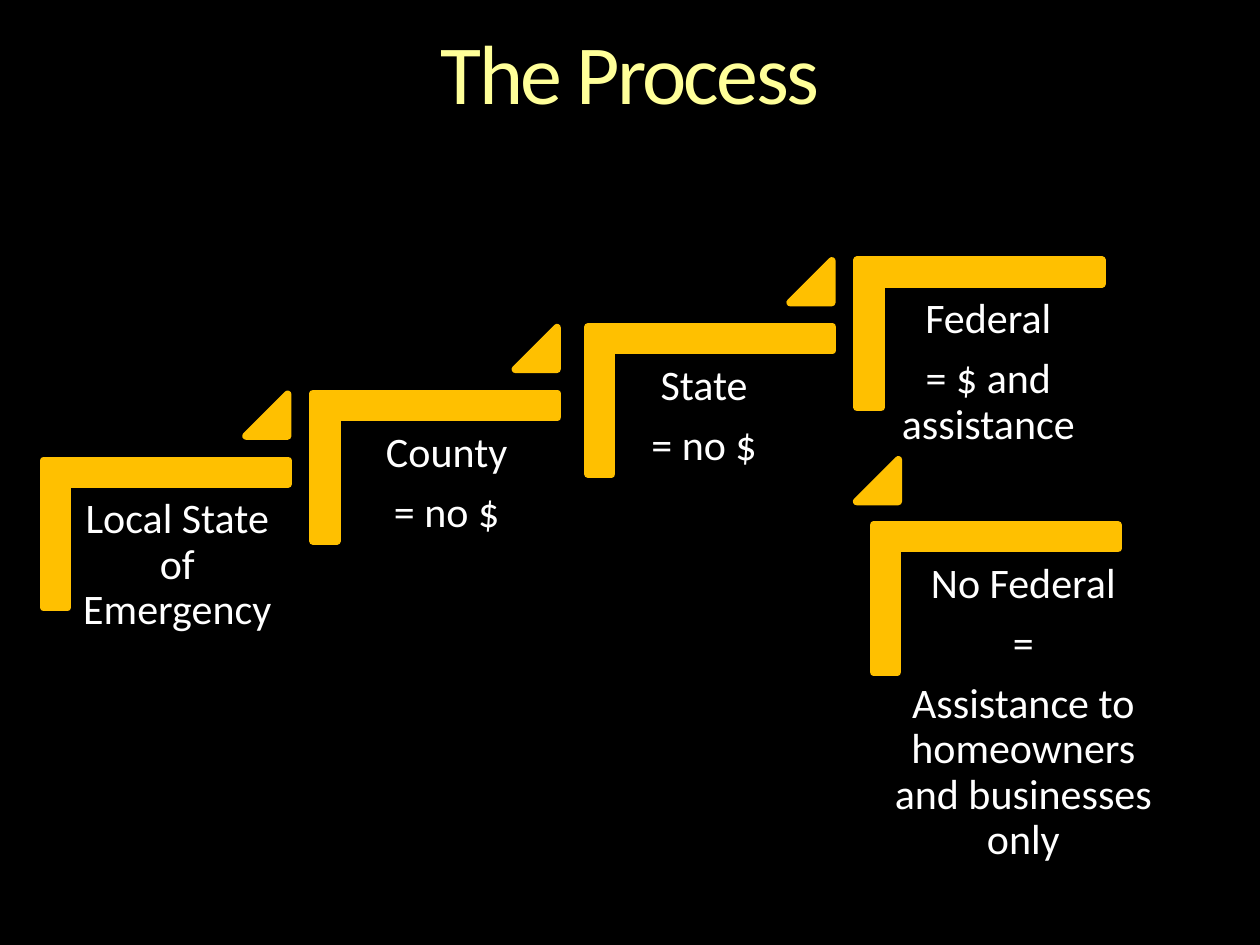
from lxml.etree import SubElement
from pptx import Presentation
from pptx.dml.color import RGBColor
from pptx.enum.shapes import MSO_SHAPE as SHAPE
from pptx.enum.text import MSO_ANCHOR as ANCHOR, PP_ALIGN as ALIGN
from pptx.oxml.ns import qn
from pptx.util import Cm, Pt

COLORS = {"background": "000000", "title": "FFFF99", "step": "FFC000", "text": "FFFFFF"}
FONT = "Calibri"
BAR_W, BAR_H, TRIANGLE = 4.93, 2.97, 0.84
STEP_RISE = 1.345
FIRST_TOP = 9.28

# Left edge, text offset, text width, paragraphs
STEPS = [
    (0.88, 0.47, 4.45, ["Local State of Emergency"]),
    (6.31, 0.47, 4.45, ["County", "= no $"]),
    (11.85, -0.45, 5.59, ["State", "= no $"]),
    (17.28, 0.42, 4.45, ["Federal", "= $ and assistance"]),
]
NO_FEDERAL = (17.61, -0.04, 6.12,
              ["No Federal", "=", "Assistance to homeowners and businesses only"])
NO_FEDERAL_TOP = 10.58


def rgb(name):
    return RGBColor.from_string(COLORS[name])


def format_paragraph(p, size, color):
    p.alignment = ALIGN.CENTER
    p.line_spacing = 0.9
    for r in p.runs:
        r.font.name = FONT
        r.font.size = Pt(size)
        r.font.color.rgb = rgb(color)


def set_margins(tf, margin):
    tf.margin_left = tf.margin_right = tf.margin_top = tf.margin_bottom = Cm(margin)


def add_title(slide, text):
    title = slide.shapes.title
    title.left, title.top, title.width, title.height = Cm(1.06), Cm(0.64), Cm(23.28), Cm(1.85)
    tf = title.text_frame
    tf.text = text
    tf.vertical_anchor = ANCHOR.MIDDLE
    set_margins(tf, 0)
    p = tf.paragraphs[0]
    format_paragraph(p, 48, "title")
    p.runs[0].font._element.set("spc", "-150")


def add_solid(shapes, kind, left, top, width, height, adjustments):
    sp = shapes.add_shape(kind, Cm(left), Cm(top), Cm(width), Cm(height))
    for i, value in enumerate(adjustments):
        sp.adjustments[i] = value
    sp.shadow.inherit = False
    sp.fill.solid()
    sp.fill.fore_color.rgb = rgb("step")
    sp.line.color.rgb = rgb("step")
    sp.line.width = Pt(4.33)
    SubElement(sp.line._ln, qn("a:round"))
    return sp


def add_triangle(shapes, left, top):
    add_solid(shapes, SHAPE.ISOSCELES_TRIANGLE, left, top, TRIANGLE, TRIANGLE, [1])


def add_step(shapes, step, top):
    left, offset, width, lines = step
    # The corner is turned a quarter, so its box is upright around the same centre
    turn = (BAR_W - BAR_H) / 2
    corner = add_solid(shapes, SHAPE.CORNER, left + turn, top - turn,
                       BAR_H, BAR_W, [0.161, 0.161])
    corner.rotation = 90

    box = shapes.add_textbox(Cm(left + offset), Cm(top + 0.5), Cm(width), Cm(3.91))
    tf = box.text_frame
    tf.word_wrap = True
    set_margins(tf, 0.25)
    tf.text = "\n".join(lines)
    for p in tf.paragraphs:
        format_paragraph(p, 24, "text")
        p.space_after = Pt(8.4)


def main():
    prs = Presentation()
    prs.slide_width, prs.slide_height = Cm(25.4), Cm(19.05)
    slide = prs.slides.add_slide(prs.slide_layouts[5])
    slide.background.fill.solid()
    slide.background.fill.fore_color.rgb = rgb("background")
    add_title(slide, "The Process")

    # Rising steps, with a triangle leading up to each next one
    shapes = slide.shapes.add_group_shape().shapes
    for i, step in enumerate(STEPS):
        top = FIRST_TOP - i * STEP_RISE
        add_step(shapes, step, top)
        if i < len(STEPS) - 1:
            add_triangle(shapes, step[0] + 4.08, top - 1.33)

    # Alternative outcome below the federal step
    add_triangle(shapes, NO_FEDERAL[0] - 0.34, NO_FEDERAL_TOP - 1.31)
    add_step(shapes, NO_FEDERAL, NO_FEDERAL_TOP)

    prs.save("out.pptx")


if __name__ == "__main__":
    main()
